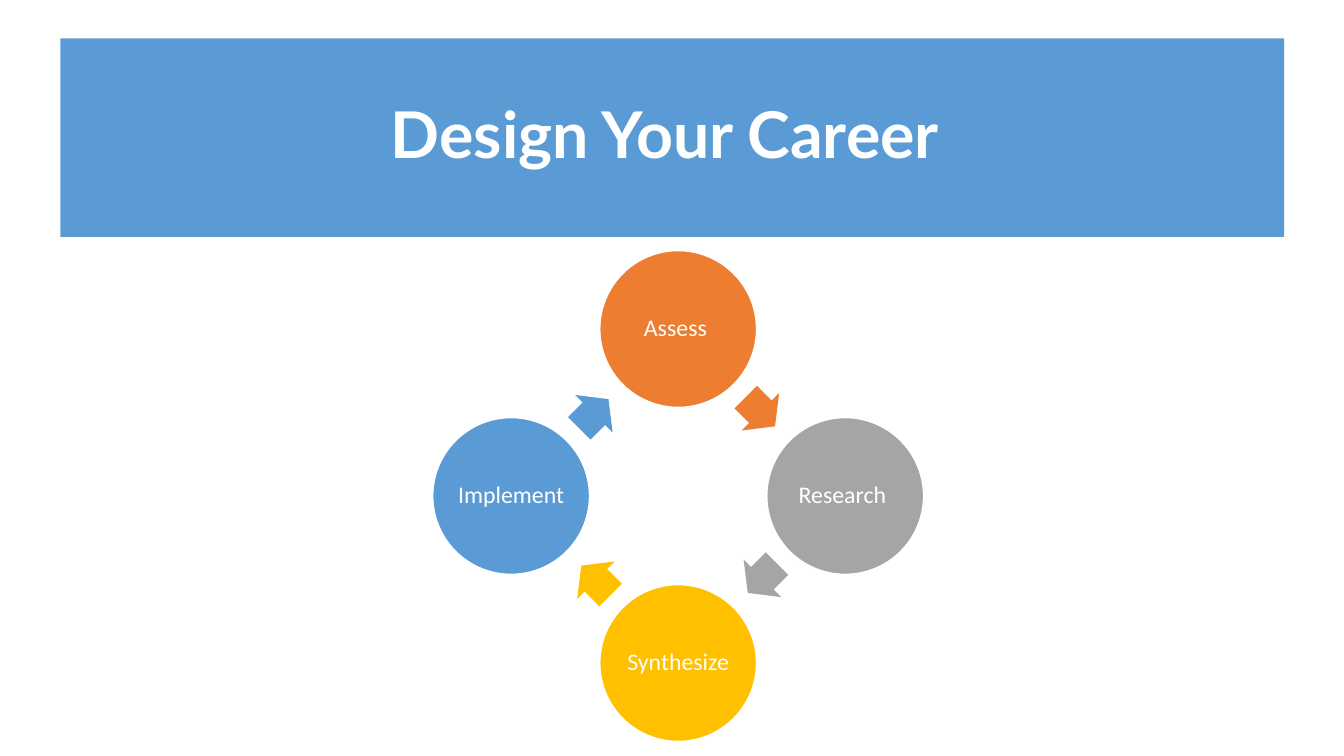
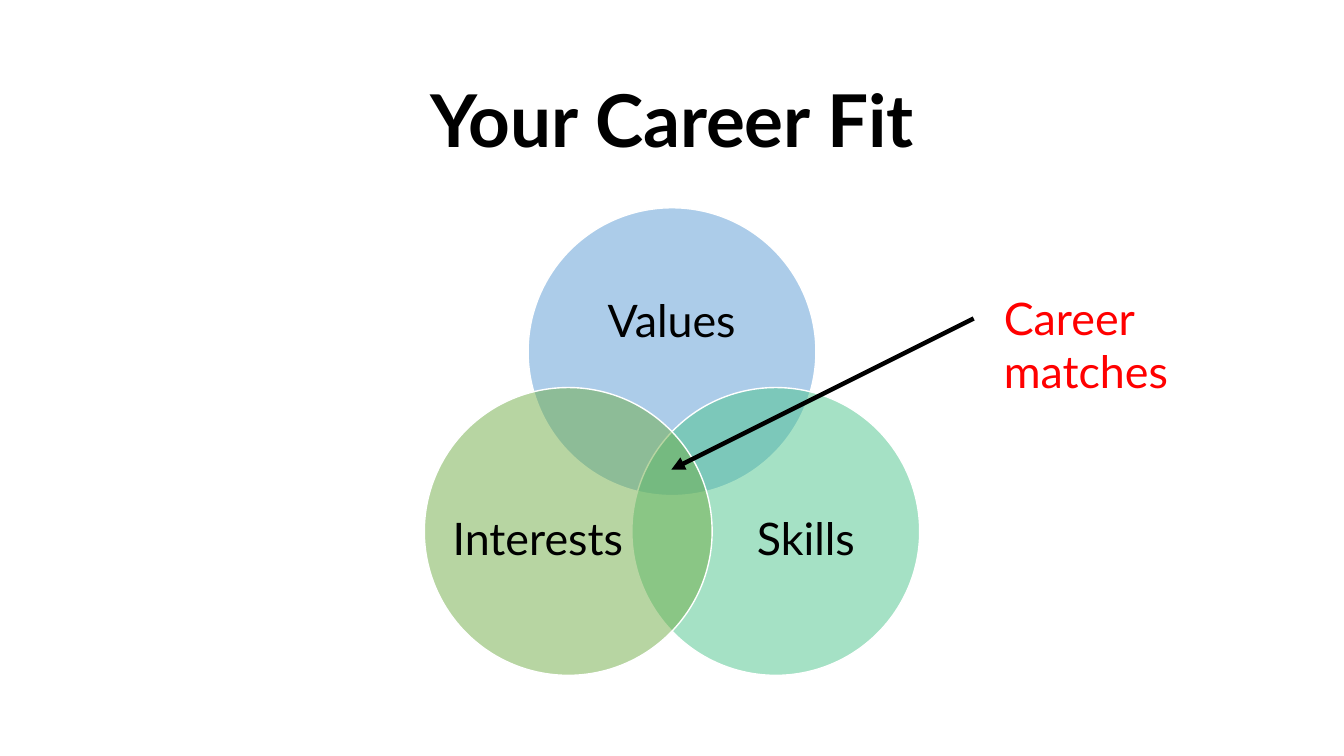
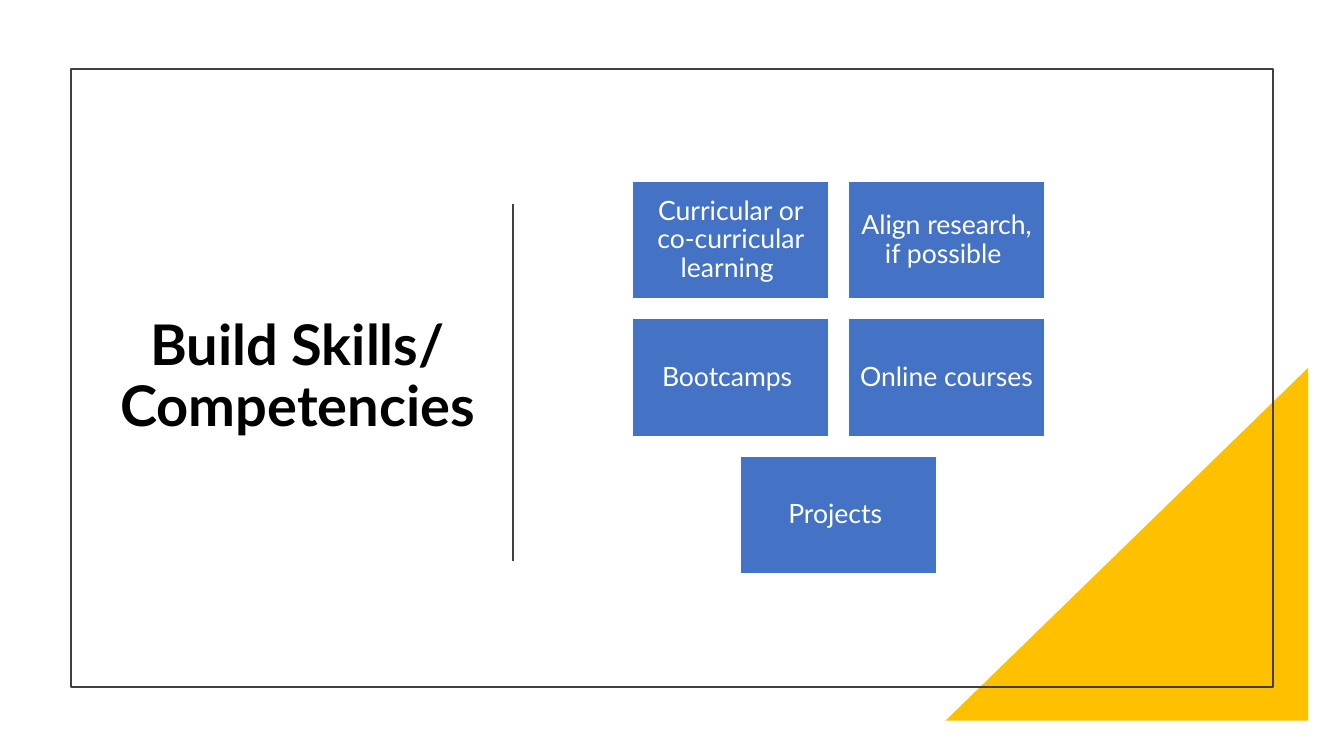
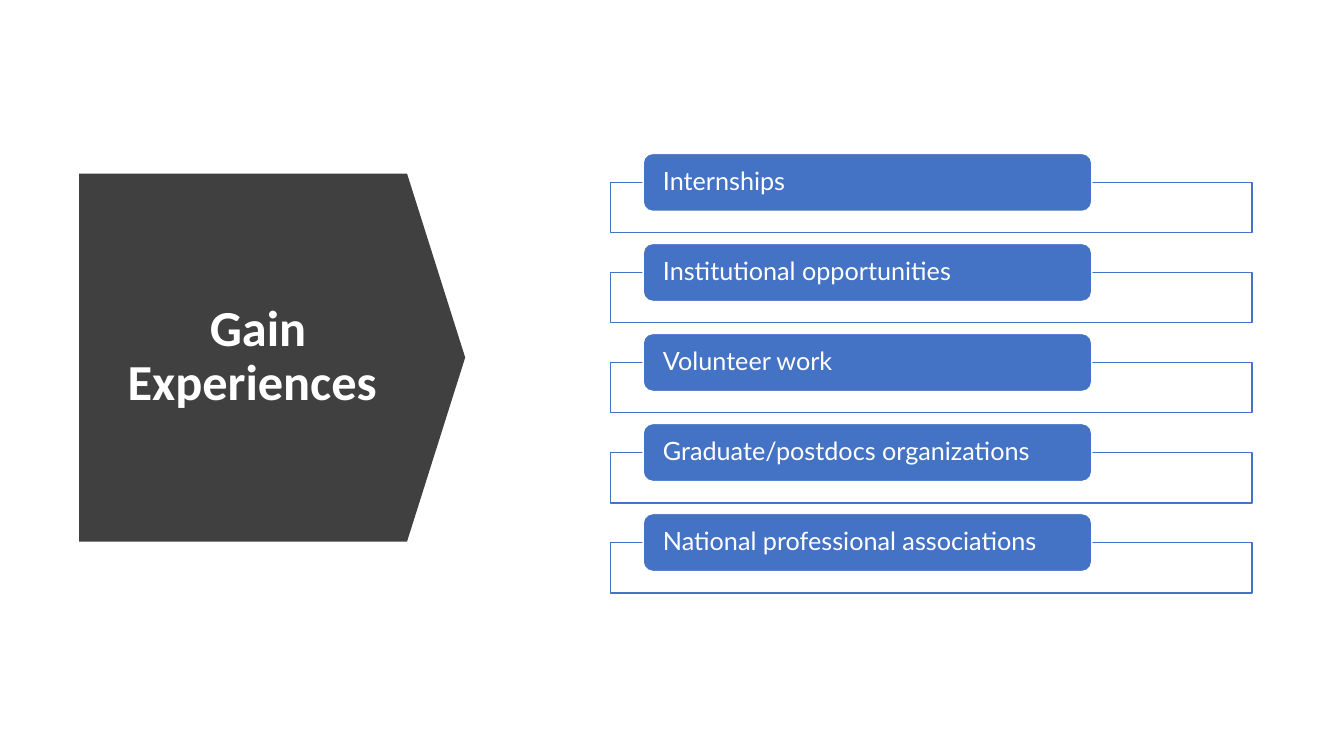
"""Build four career planning slides."""
from dataclasses import dataclass
from math import cos, radians, sin

from lxml import etree
from pptx import Presentation
from pptx.dml.color import RGBColor
from pptx.enum.shapes import MSO_CONNECTOR, MSO_SHAPE
from pptx.enum.text import MSO_ANCHOR, PP_ALIGN
from pptx.oxml.ns import qn
from pptx.util import Pt

RECT, OVAL, ARROW = MSO_SHAPE.RECTANGLE, MSO_SHAPE.OVAL, MSO_SHAPE.RIGHT_ARROW
ROUNDED, TRIANGLE = MSO_SHAPE.ROUNDED_RECTANGLE, MSO_SHAPE.RIGHT_TRIANGLE
STRAIGHT = MSO_CONNECTOR.STRAIGHT
LEFT, CENTER = PP_ALIGN.LEFT, PP_ALIGN.CENTER
TOP, MIDDLE = MSO_ANCHOR.TOP, MSO_ANCHOR.MIDDLE


@dataclass(frozen=True)
class Theme:
    """Colours, fonts and type sizes of the deck."""
    white: str = "FFFFFF"
    black: str = "000000"
    dark: str = "404040"
    red: str = "FF0000"
    orange: str = "ED7D31"
    grey: str = "A5A5A5"
    gold: str = "FFC000"
    sky: str = "5B9BD5"
    blue: str = "4472C4"
    mint: str = "4DC58D"
    green: str = "70AD47"
    main: str = "Lato"
    alt: str = "Calibri"
    cycle_size: float = 17
    item_size: float = 18
    tile_size: float = 19
    venn_size: float = 32
    spacing: float = 0.9


T = Theme()


def add_text(sp, text, size, color, font=T.main, bold=False, align=CENTER,
             anchor=MIDDLE, spacing=T.spacing, inset=(7.2, 3.6)):
    """Set the text of a shape and format its runs."""
    tf = sp.text_frame
    tf.word_wrap = True
    tf.vertical_anchor = anchor
    tf.margin_left = tf.margin_right = Pt(inset[0])
    tf.margin_top = tf.margin_bottom = Pt(inset[1])
    tf.text = text
    for p in tf.paragraphs:
        p.alignment = align
        p.line_spacing = spacing
        for r in p.runs:
            r.font.size = Pt(size)
            r.font.name = font
            r.font.bold = bold
            r.font.color.rgb = RGBColor.from_string(color)


def add_box(s, box, text, size, color, **style):
    """Add a text box."""
    sp = s.shapes.add_textbox(*map(Pt, box))
    add_text(sp, text, size, color, **style)


def add_title(s, box, text, size, color=T.black, font=T.main):
    """Add a bold centred title."""
    add_box(s, box, text, size, color, font=font, bold=True)


def add_shape(s, kind, box, fill=None, line=None, width=1, alpha=None, adj=()):
    """Add a preset shape with an optional fill and outline."""
    sp = s.shapes.add_shape(kind, *map(Pt, box))
    sp.shadow.inherit = False
    for i, value in enumerate(adj):
        sp.adjustments[i] = value
    if fill:
        sp.fill.solid()
        sp.fill.fore_color.rgb = RGBColor.from_string(fill)
    else:
        sp.fill.background()
    if alpha:
        clr = sp._element.spPr.find(qn("a:solidFill")).find(qn("a:srgbClr"))
        etree.SubElement(clr, qn("a:alpha")).set("val", str(alpha * 1000))
    if line:
        sp.line.color.rgb = RGBColor.from_string(line)
        sp.line.width = Pt(width)
    else:
        sp.line.fill.background()
    return sp


def add_line(s, start, end, color, width, arrow=False):
    """Add a straight line, with an arrowhead at its end if asked."""
    cx = s.shapes.add_connector(STRAIGHT, *map(Pt, (*start, *end)))
    cx.line.color.rgb = RGBColor.from_string(color)
    cx.line.width = Pt(width)
    if arrow:
        ln = cx._element.spPr.find(qn("a:ln"))
        etree.SubElement(ln, qn("a:tailEnd")).set("type", "triangle")
    etree.SubElement(cx._element.spPr, qn("a:effectLst"))


def around(cx, cy, w, h):
    """Return the box of a given size centred on a point."""
    return cx - w / 2, cy - h / 2, w, h


def polar(cx, cy, radius, angle):
    """Return the point at a clockwise angle from the x axis."""
    return cx + radius * cos(radians(angle)), cy + radius * sin(radians(angle))


def design_slide(s):
    """Draw the four step career cycle."""
    add_shape(s, RECT, (43.2, 27.4, 874, 141.8), T.sky)
    add_title(s, (66, 46, 828, 104.4), "Design Your Career ", 46, T.white)
    steps = (("Assess ", T.orange), ("Research ", T.grey),
             ("Synthesize ", T.gold), ("Implement ", T.sky))
    center = 484.4, 354.3
    for i, (text, color) in enumerate(steps):
        turn = 90 * i
        x, y = polar(*center, 119.3, turn - 90)
        sp = add_shape(s, OVAL, around(x, y, 112, 112), color, T.white)
        add_text(sp, text, T.cycle_size, T.white, T.alt, inset=(1.5, 1.5))
        x, y = polar(*center, 84.1, turn - 45.7)
        sp = add_shape(s, ARROW, around(x, y, 29.6, 38), color, adj=(0.6, 0.5))
        sp.rotation = turn + 45


def fit_slide(s):
    """Draw the three overlapping circles and their callout."""
    add_title(s, (66, 44, 828, 89), "Your Career Fit", 52)
    parts = (("Values", T.sky, -90, (404.6, 184.3, 150.5, 92.2)),
             ("Skills", T.mint, 30, (514.1, 329.8, 123.1, 113)),
             ("Interests ", T.green, 150, (322.6, 329.8, 123.1, 113)))
    for text, color, angle, box in parts:
        x, y = polar(480, 336.8, 85.6, angle)
        add_shape(s, OVAL, around(x, y, 205.6, 205.6), color, T.white, alpha=50)
        add_box(s, box, text, T.venn_size, T.black, inset=(0, 0))
    add_line(s, (695.5, 227.5), (479.5, 335.5), T.black, 3.25, arrow=True)
    add_box(s, (709.9, 203.8, 162, 85), "Career matches", T.venn_size, T.red,
            align=LEFT, anchor=TOP, spacing=1)


def skills_slide(s):
    """Draw the framed slide with centred rows of tiles."""
    sp = add_shape(s, TRIANGLE, (675.4, 262.8, 259, 252), T.gold)
    sp._element.spPr.xfrm.flipH = True
    add_shape(s, RECT, (50.6, 49.2, 859, 441.4), line=T.dark, width=1.5)
    add_title(s, (62, 93.6, 301, 352.8), "Build Skills/\vCompetencies", 40)
    add_line(s, (366.6, 146), (366.6, 401), T.dark, 1.5)
    rows = (("Curricular or co-curricular learning ", "Align research, if possible "),
            ("Bootcamps ", "Online courses"),
            ("Projects ",))
    pitch_x, pitch_y = 154.3, 98.2
    for i, row in enumerate(rows):
        for j, text in enumerate(row):
            x = 599 + (j - (len(row) - 1) / 2) * pitch_x
            y = 171.6 + i * pitch_y
            sp = add_shape(s, RECT, around(x, y, 140.3, 84.2), T.blue, T.white)
            add_text(sp, text, T.tile_size, T.white, inset=(5.7, 5.7))


def experiences_slide(s):
    """Draw the pointed title panel and the list of labelled bars."""
    add_shape(s, ARROW, (56.5, 124, 275.8, 262.8), T.dark, adj=(1, 0.158))
    add_title(s, (80.6, 154.8, 207.4, 200.9), "Gain Experiences ", 36, T.white, T.alt)
    items = ("Internships", "Institutional opportunities", "Volunteer work",
             "Graduate/postdocs organizations", "National professional associations")
    for i, text in enumerate(items):
        y = 109.6 + 64.3 * i
        add_shape(s, RECT, (436.3, y + 20.7, 457.9, 36), T.white, T.blue, alpha=90)
        sp = add_shape(s, ROUNDED, (459.4, y, 320.4, 41.4), T.blue, T.white)
        add_text(sp, text, T.item_size, T.white, align=LEFT, inset=(12.1, 0))


def main():
    """Build and save the deck."""
    prs = Presentation()
    prs.slide_width, prs.slide_height = Pt(960), Pt(540)
    for build in (design_slide, fit_slide, skills_slide, experiences_slide):
        build(prs.slides.add_slide(prs.slide_layouts[6]))
    prs.save("out.pptx")


if __name__ == "__main__":
    main()
